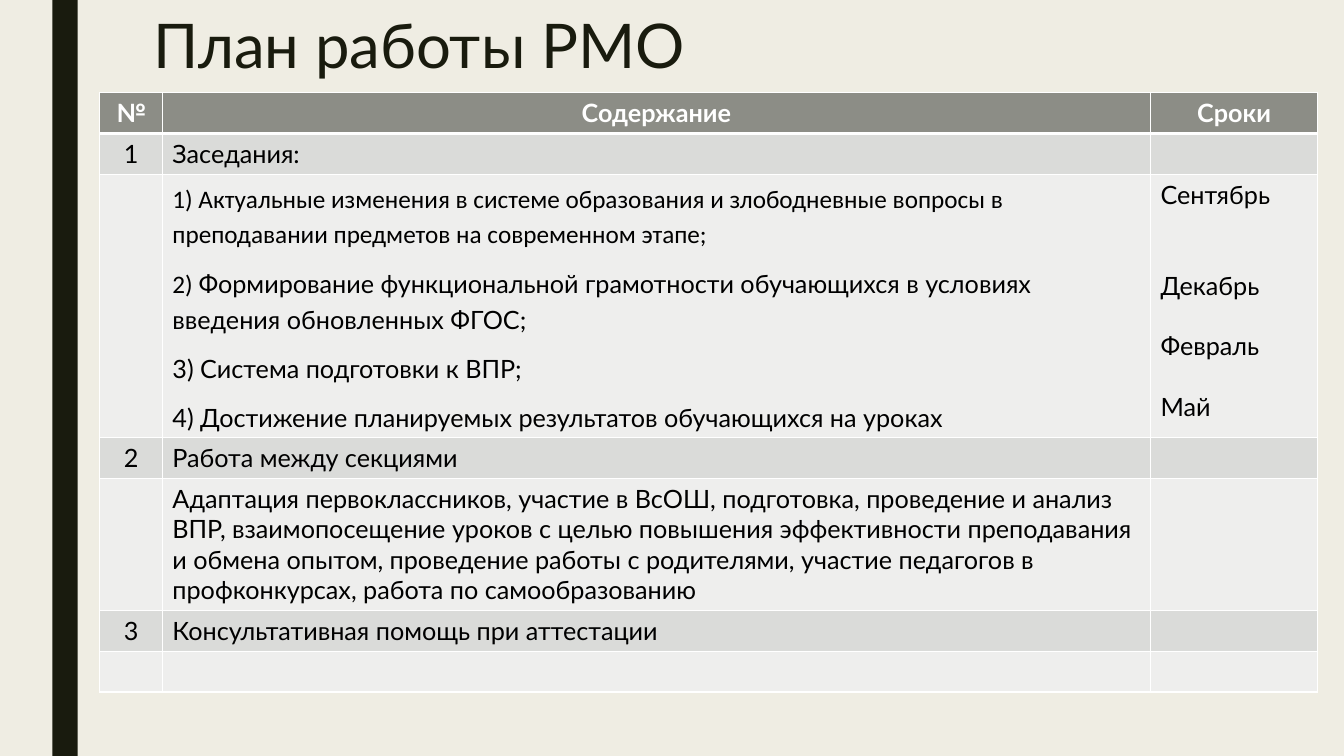
from lxml.etree import SubElement
from pptx import Presentation
from pptx.dml.color import RGBColor
from pptx.enum.shapes import MSO_SHAPE
from pptx.enum.text import MSO_ANCHOR, PP_ALIGN
from pptx.oxml.ns import qn
from pptx.util import Inches, Pt

WIDTH, HEIGHT = Inches(13.33), Inches(7.5)

CREAM = RGBColor(0xEF, 0xED, 0xE3)
DARK = RGBColor(0x19, 0x1B, 0x0E)
HEADER_GREY = RGBColor(0x8C, 0x8D, 0x86)
SECTION_GREY = RGBColor(0xDA, 0xDB, 0xD9)
DETAIL_GREY = RGBColor(0xEE, 0xEE, 0xED)
WHITE = RGBColor(0xFF, 0xFF, 0xFF)
BLACK = RGBColor(0, 0, 0)

MAIN_FONT, SECOND_FONT = "Lato", "Calibri"
TEXT_SIZE = 18
BLANK_LINE = 21.6  # height of one text line, in points

# Shares of the slide, in percent
COLUMN_SHARES = (4.65, 73.52, 12.45)
LINE_ROW, MEETINGS_ROW, SECTIONS_ROW = 5.4, 34.7, 17.4

# A paragraph is a list of (text, font) spans
MEETINGS = [
    [("1) Актуальные изменения в системе образования и злободневные вопросы "
      "в преподавании предметов на современном этапе;", SECOND_FONT)],
    [("2) ", SECOND_FONT),
     ("Формирование функциональной грамотности обучающихся в условиях "
      "введения обновленных ФГОС;", MAIN_FONT)],
    [("3) Система подготовки к ВПР;", MAIN_FONT)],
    [("4) Достижение планируемых результатов обучающихся на уроках", MAIN_FONT)],
]
# Month and the number of free lines above it
MONTHS = [("Сентябрь", 0), ("Декабрь", 2), ("Февраль", 1), ("Май", 1)]
SECTION_WORK = (
    "Адаптация первоклассников, участие в ВсОШ, подготовка, проведение и анализ "
    "ВПР, взаимопосещение уроков с целью повышения эффективности преподавания "
    "и обмена опытом, проведение работы с родителями, участие педагогов в "
    "профконкурсах, работа по самообразованию")

# Row height, number, content, dates
PLAN = [
    (LINE_ROW, "№", "Содержание", "Сроки"),
    (LINE_ROW, "1", "Заседания:", ""),
    (MEETINGS_ROW, "", "", ""),
    (LINE_ROW, "2", "Работа между секциями", ""),
    (SECTIONS_ROW, "", SECTION_WORK, ""),
    (LINE_ROW, "3", "Консультативная помощь при аттестации", ""),
    (LINE_ROW, "", "", ""),
]


def across(share):
    return round(WIDTH * share / 100)


def down(share):
    return round(HEIGHT * share / 100)


def area(left, top, width, height):
    return across(left), down(top), across(width), down(height)


def add_span(para, text, color=BLACK, font=MAIN_FONT, size=TEXT_SIZE, bold=False):
    span = para.add_run()
    span.text = text
    span.font.name, span.font.size, span.font.bold = font, Pt(size), bold
    span.font.color.rgb = color


def next_para(frame, index):
    return frame.paragraphs[0] if index == 0 else frame.add_paragraph()


def add_bar(slide):
    bar = slide.shapes.add_shape(MSO_SHAPE.RECTANGLE, *area(3.9, 0, 1.88, 100))
    bar.shadow.inherit = False
    bar.fill.solid()
    bar.fill.fore_color.rgb = DARK
    bar.line.fill.background()


def format_title(slide, text):
    title = slide.shapes.title
    title.left, title.top, title.width, title.height = area(10.65, 1.47, 78.77, 10.67)
    frame = title.text_frame
    frame.vertical_anchor = MSO_ANCHOR.TOP
    para = frame.paragraphs[0]
    para.alignment = PP_ALIGN.LEFT
    para.line_spacing = 0.89
    add_span(para, text, DARK, size=44)


def add_borders(cell, bottom):
    properties = cell._tc.get_or_add_tcPr()
    for side, points in (("L", 1), ("R", 1), ("T", 1), ("B", bottom)):
        line = SubElement(properties, qn(f"a:ln{side}"), w=str(Pt(points)))
        fill = SubElement(line, qn("a:solidFill"))
        SubElement(fill, qn("a:srgbClr"), val=str(WHITE))


def format_cell(cell, text, row, column):
    header = row == 0
    add_borders(cell, bottom=3 if header else 1)
    cell.fill.solid()
    cell.fill.fore_color.rgb = (
        HEADER_GREY if header else SECTION_GREY if row % 2 else DETAIL_GREY)
    para = cell.text_frame.paragraphs[0]
    para.font.size = Pt(TEXT_SIZE)
    if header or column == 0:
        para.alignment = PP_ALIGN.CENTER
    if text:
        add_span(para, text, WHITE if header else BLACK, bold=header)


def fill_meetings(cell):
    for index, spans in enumerate(MEETINGS):
        para = next_para(cell.text_frame, index)
        para.line_spacing, para.space_after = 1.15, Pt(10)
        for text, font in spans:
            add_span(para, text, font=font)


def fill_months(cell):
    for index, (month, free_lines) in enumerate(MONTHS):
        para = next_para(cell.text_frame, index)
        para.space_before = Pt(free_lines * BLANK_LINE)
        add_span(para, month)


def add_plan(slide):
    total_height = sum(height for height, *_ in PLAN)
    table = slide.shapes.add_table(
        len(PLAN), len(COLUMN_SHARES),
        *area(7.43, 12.27, sum(COLUMN_SHARES), total_height)).table
    table.first_row = table.horz_banding = False
    for column, share in zip(table.columns, COLUMN_SHARES):
        column.width = across(share)
    for row, (height, *texts) in enumerate(PLAN):
        table.rows[row].height = down(height)
        for column, text in enumerate(texts):
            format_cell(table.cell(row, column), text, row, column)
    fill_meetings(table.cell(2, 1))
    fill_months(table.cell(2, 2))


def main():
    deck = Presentation()
    deck.slide_width, deck.slide_height = WIDTH, HEIGHT
    page = deck.slides.add_slide(deck.slide_layouts[5])  # title only
    page.background.fill.solid()
    page.background.fill.fore_color.rgb = CREAM
    add_bar(page)
    format_title(page, "План работы РМО")
    add_plan(page)
    deck.save("out.pptx")


if __name__ == "__main__":
    main()
